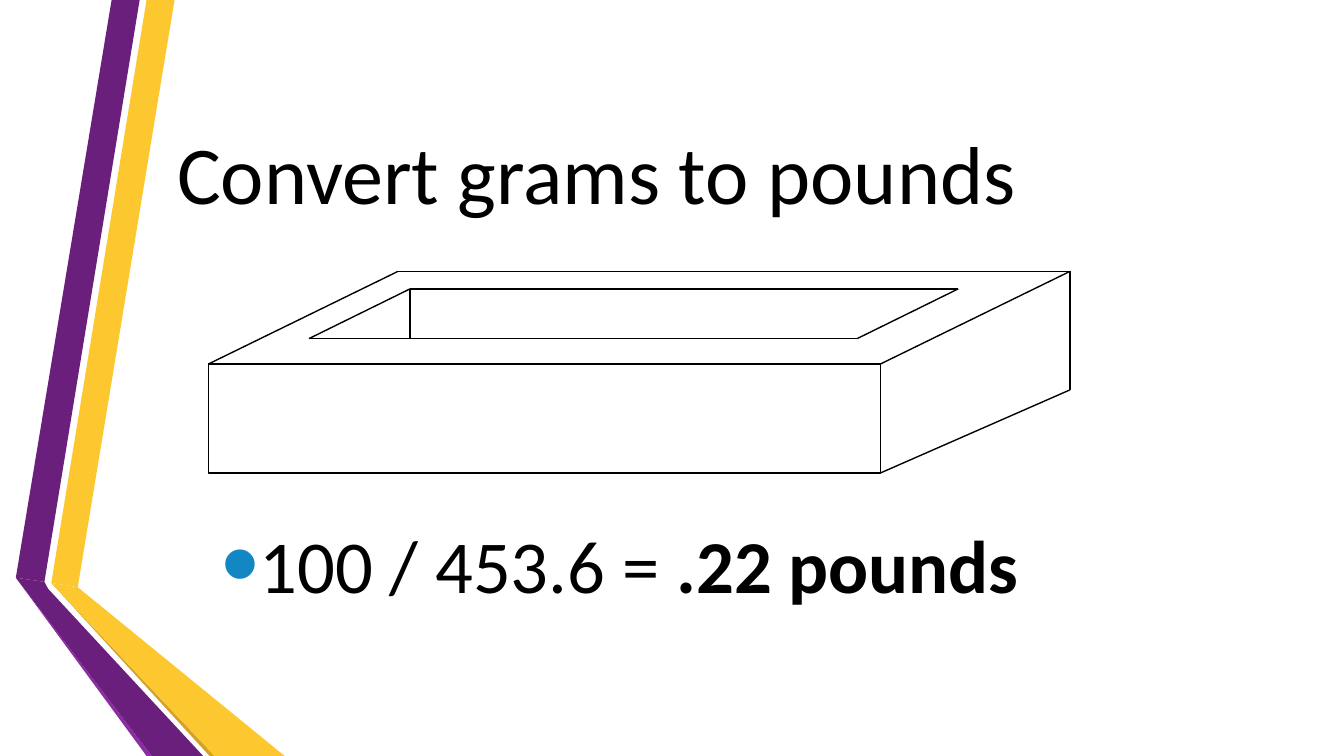
from lxml.etree import SubElement
from pptx import Presentation
from pptx.dml.color import RGBColor
from pptx.enum.shapes import MSO_CONNECTOR, MSO_SHAPE
from pptx.enum.text import MSO_ANCHOR
from pptx.oxml.ns import qn
from pptx.util import Cm, Pt

WIDTH, HEIGHT = 25.4, 14.29
BLACK, PURPLE, VIOLET = "000000", "6B1F7C", "8D2BA5"
YELLOW, GOLD, BLUE = "FDC82F", "D3A229", "1287C3"

# Corners where the two ribbons bend
PURPLE_L, PURPLE_R = (0.3, 10.92), (0.84, 11)
YELLOW_L, YELLOW_R = (0.97, 11.02), (1.47, 11.1)

RIBBONS = [
    (YELLOW, [YELLOW_L, YELLOW_R, (3.3, 0), (2.77, 0)]),
    (PURPLE, [PURPLE_L, PURPLE_R, (2.64, 0), (2.11, 0)]),
    (VIOLET, [PURPLE_L, (2.77, HEIGHT), (2.87, HEIGHT)]),
    (GOLD, [YELLOW_L, (3.96, HEIGHT), (4.06, HEIGHT)]),
    (YELLOW, [YELLOW_L, (4.06, HEIGHT), (5.38, HEIGHT), YELLOW_R]),
    (PURPLE, [PURPLE_L, (2.87, HEIGHT), (3.84, HEIGHT), (0.91, 11.13), PURPLE_R]),
]


def rgb(color):
    return RGBColor.from_string(color)


def add_ribbon(s, color, points):
    scaled = [(Cm(x), Cm(y)) for x, y in points]
    builder = s.shapes.build_freeform(*scaled[0])
    builder.add_line_segments(scaled[1:], close=True)
    sp = builder.convert_to_shape()
    sp.shadow.inherit = False
    sp.fill.solid()
    sp.fill.fore_color.rgb = rgb(color)
    sp.line.fill.background()


def add_line(s, start, end):
    line = s.shapes.add_connector(
        MSO_CONNECTOR.STRAIGHT, *[Cm(v) for v in start + end])
    line.line.color.rgb = rgb(BLACK)
    line.line.width = Pt(0.75)
    SubElement(line._element.spPr, qn("a:effectLst"))


def add_text(s, left, top, width, height, size, text):
    sp = s.shapes.add_textbox(Cm(left), Cm(top), Cm(width), Cm(height))
    tf = sp.text_frame
    tf.word_wrap = True
    tf.vertical_anchor = MSO_ANCHOR.MIDDLE
    p = tf.paragraphs[0]
    p.text = text
    for r in p.runs:
        format_run(r, size)
    return p


def format_run(r, size, bold=False):
    r.font.name = "Calibri"
    r.font.size = Pt(size)
    r.font.bold = bold
    r.font.color.rgb = rgb(BLACK)


def add_bullet(p, color):
    pPr = p._p.get_or_add_pPr()
    pPr.set("marL", str(Cm(0.58)))
    pPr.set("indent", str(Cm(-0.58)))
    SubElement(SubElement(pPr, qn("a:buClr")), qn("a:srgbClr"), val=color)
    SubElement(pPr, qn("a:buSzPct"), val="145000")
    SubElement(pPr, qn("a:buFont"), typeface="Arial")
    SubElement(pPr, qn("a:buChar"), char="•")


def add_tray(s):
    left, top, width, height = 3.94, 6.88, 12.7, 2.06
    right, bottom = left + width, top + height
    shift, back = 3.58, 5.13

    # Front face
    sp = s.shapes.add_shape(
        MSO_SHAPE.RECTANGLE, Cm(left), Cm(top), Cm(width), Cm(height))
    sp.shadow.inherit = False
    sp.fill.background()
    sp.line.color.rgb = rgb(BLACK)
    sp.line.width = Pt(0.75)

    # Top and right side
    back_left, back_right = (left + shift, back), (right + shift, back)
    back_bottom = (right + shift, 7.37)
    add_line(s, (left, top), back_left)
    add_line(s, (right, top), back_right)
    add_line(s, back_left, back_right)
    add_line(s, back_right, back_bottom)
    add_line(s, (right, bottom), back_bottom)

    # Opening
    far_left, far_right = (7.75, 5.46), (18.11, 5.46)
    near_left, near_right = (5.84, 6.4), (16.2, 6.4)
    add_line(s, far_left, near_left)
    add_line(s, far_right, near_right)
    add_line(s, far_left, far_right)
    add_line(s, near_left, near_right)
    add_line(s, far_left, (far_left[0], near_left[1]))


def main():
    prs = Presentation()
    prs.slide_width, prs.slide_height = Cm(WIDTH), Cm(HEIGHT)
    s = prs.slides.add_slide(prs.slide_layouts[6])

    # Side ribbons
    for color, points in RIBBONS:
        add_ribbon(s, color, points)

    # Title
    add_text(s, 3.1, 1.42, 20.88, 3.66, 44, "Convert grams to pounds")

    # Calculation with its result in bold
    p = add_text(s, 3.94, 8.56, 20.88, 4.17, 40, "100 / 453.6 = ")
    p.space_after = Pt(4.5)
    add_bullet(p, BLUE)
    r = p.add_run()
    r.text = ".22 pounds"
    format_run(r, 40, bold=True)

    # Tray drawing
    add_tray(s)

    prs.save("out.pptx")


if __name__ == "__main__":
    main()
